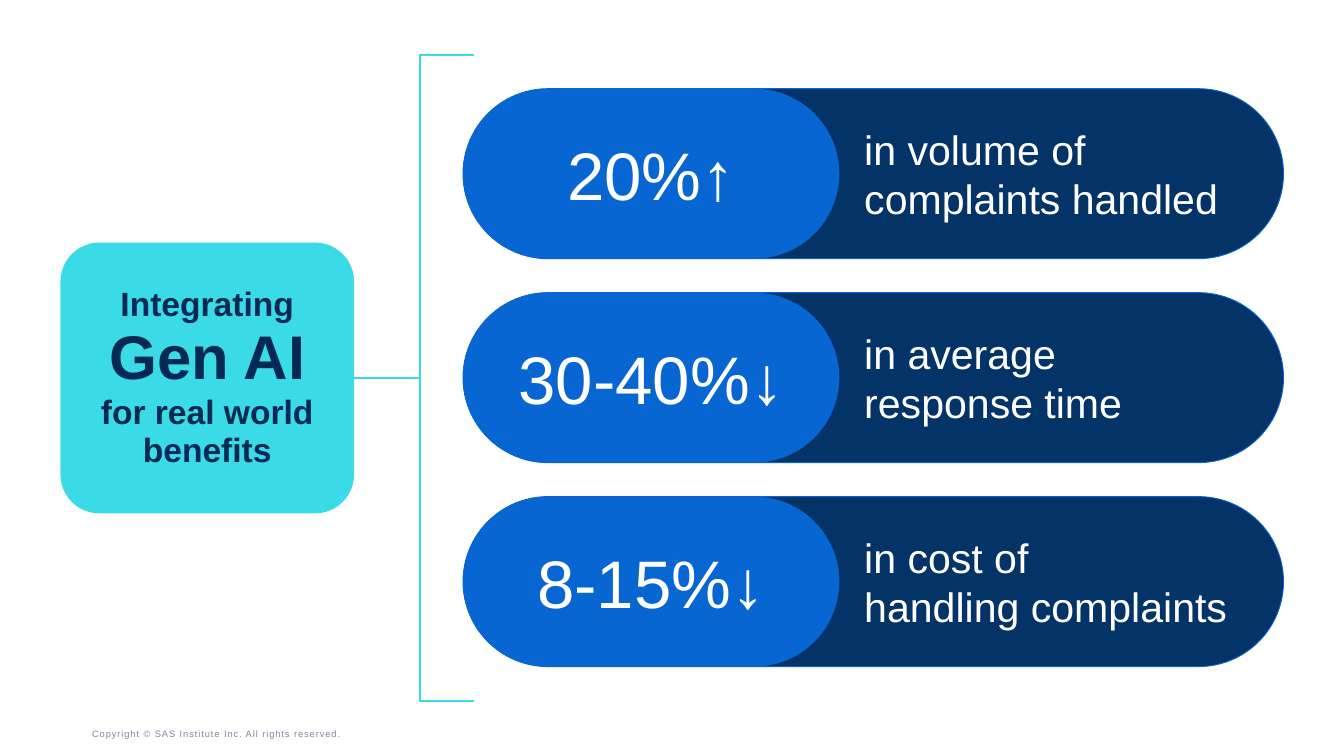
from lxml.etree import SubElement
from pptx import Presentation
from pptx.dml.color import RGBColor
from pptx.enum.shapes import MSO_CONNECTOR as Connector, MSO_SHAPE as Shape
from pptx.enum.text import MSO_ANCHOR as Anchor, MSO_AUTO_SIZE as AutoSize, PP_ALIGN as Align
from pptx.oxml.ns import qn
from pptx.util import Inches, Pt

COLORS = {
    "cyan": "3ADBE6",
    "blue": "0766D1",
    "navy": "043368",
    "ink": "032954",
    "white": "FFFFFF",
    "gray": "7E889A",
}
HEADLINE = [[("Integrating\n", 36), ("Gen AI", 66)], [("for real world benefits", 36)]]
BENEFITS = [
    ("20%↑", "in volume of complaints handled"),
    ("30-40%↓", "in average\nresponse time"),
    ("8-15%↓", "in cost of\nhandling complaints"),
]
COPYRIGHT = "Copyright © SAS Institute Inc. All rights reserved."

PILL_LEFT, PILL_TOP, PILL_STEP = 6.89, 1.32, 3.035
PILL_WIDTH, PILL_HEIGHT, VALUE_WIDTH = 12.21, 2.53, 5.6


def color(name):
    return RGBColor.from_string(COLORS[name])


def write(box, paragraphs, ink="white", bold=False, align=Align.LEFT, spacing=None,
          tracking=None, anchor=Anchor.MIDDLE, left_inset=0.1):
    frame = box.text_frame
    frame.word_wrap = True
    frame.vertical_anchor = anchor
    frame.margin_left = Inches(left_inset)
    for index, pieces in enumerate(paragraphs):
        para = frame.add_paragraph() if index else frame.paragraphs[0]
        para.alignment = align
        if spacing:
            para.line_spacing = spacing
        for text, size in pieces:
            for number, line in enumerate(text.split("\n")):
                if number:
                    para.add_line_break()
                if not line:
                    continue
                span = para.add_run()
                span.text = line
                span.font.name = "Arial"
                span.font.size = Pt(size)
                span.font.bold = bold
                span.font.color.rgb = color(ink)
                if tracking:
                    span._r.get_or_add_rPr().set("spc", str(tracking * 100))


def add_box(page, kind, place, adjust, fill=None, line=None, weight=1):
    box = page.shapes.add_shape(kind, *map(Inches, place))
    box.shadow.inherit = False
    box.adjustments[0] = adjust
    if fill:
        box.fill.solid()
        box.fill.fore_color.rgb = color(fill)
    else:
        box.fill.background()
    if line:
        box.line.color.rgb = color(line)
        box.line.width = Pt(weight)
    else:
        box.line.fill.background()
    return box


def main():
    deck = Presentation()
    deck.slide_width, deck.slide_height = Inches(20), Inches(11.25)
    page = deck.slides.add_slide(deck.slide_layouts[6])

    footer = page.shapes.add_textbox(*map(Inches, (1.37, 10.78, 5.5, 0.27)))
    write(footer, [[(COPYRIGHT, 10)]], ink="gray", tracking=1, anchor=Anchor.BOTTOM, left_inset=0)
    footer.text_frame.auto_size = AutoSize.SHAPE_TO_FIT_TEXT

    add_box(page, Shape.LEFT_BRACKET, (6.25, 0.82, 0.8, 9.61), 0, line="cyan", weight=2)
    card = add_box(page, Shape.ROUNDED_RECTANGLE, (0.9, 3.61, 4.37, 4.03), 0.144, fill="cyan")
    write(card, HEADLINE, ink="ink", bold=True, align=Align.CENTER, spacing=0.95)

    middle = Inches(5.625)
    stem = page.shapes.add_connector(Connector.STRAIGHT, Inches(5.27), middle, Inches(6.25), middle)
    stem.begin_connect(card, 3)
    stem.line.color.rgb = color("cyan")
    stem.line.width = Pt(2)
    SubElement(stem._element.spPr, qn("a:effectLst"))

    for index, (value, label) in enumerate(BENEFITS):
        top = PILL_TOP + index * PILL_STEP
        pill = add_box(page, Shape.ROUNDED_RECTANGLE, (PILL_LEFT, top, PILL_WIDTH, PILL_HEIGHT),
                       0.5, fill="navy", line="blue")
        write(pill, [[(label, 44)]], left_inset=VALUE_WIDTH)
        badge = add_box(page, Shape.ROUNDED_RECTANGLE, (PILL_LEFT, top, VALUE_WIDTH, PILL_HEIGHT),
                        0.5, fill="blue")
        write(badge, [[(value, 72)]], align=Align.CENTER)

    deck.save("out.pptx")


if __name__ == "__main__":
    main()
